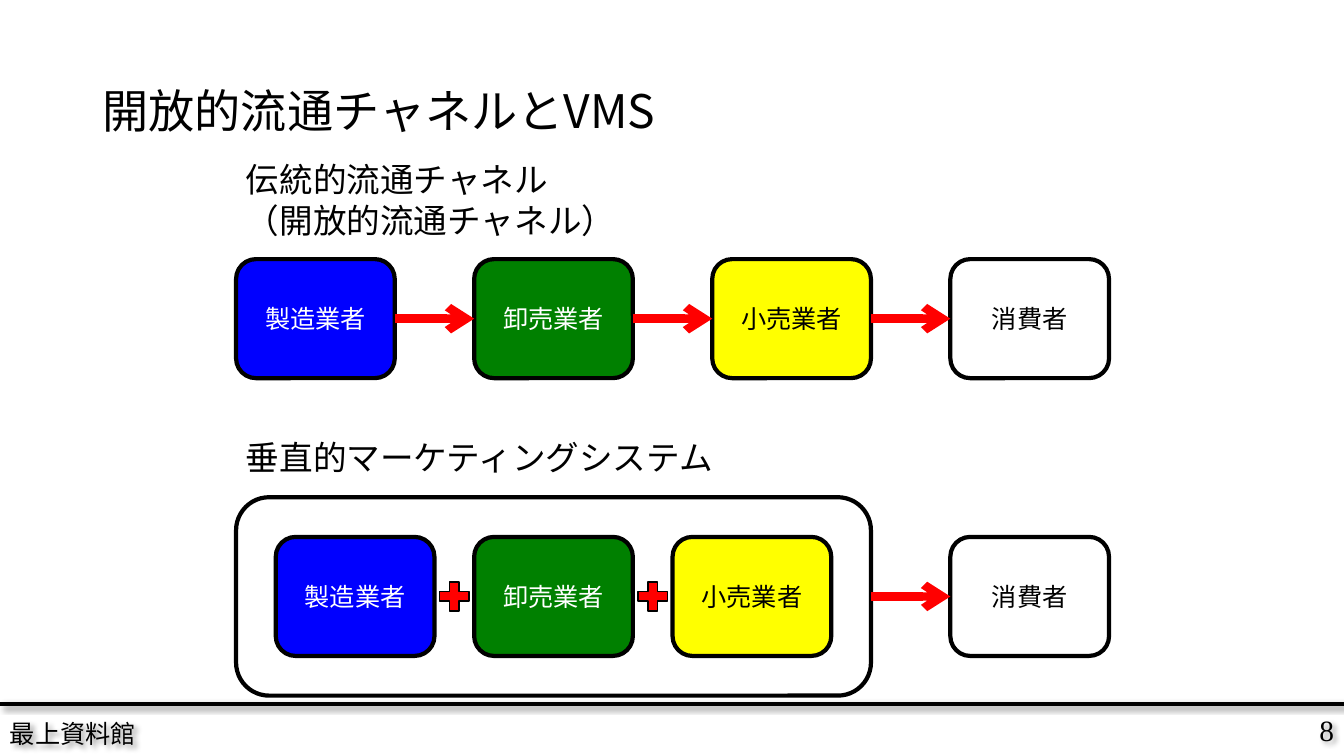
import pptx
import pptx.util
import pptx.dml.color
import pptx.enum.shapes
import pptx.enum.text
import pptx.oxml
import pptx.oxml.ns
import lxml.etree

Cm = pptx.util.Cm
Pt = pptx.util.Pt
SHAPE = pptx.enum.shapes.MSO_SHAPE
ALIGN = pptx.enum.text.PP_ALIGN

TITLE = "開放的流通チャネルとVMS"
OPEN_HEADING = ["伝統的流通チャネル", "（開放的流通チャネル）"]
VERTICAL_HEADING = ["垂直的マーケティングシステム"]
FOOTER = "最上資料館"
PAGE_NUMBER = "8"
PLAYERS = [
    ("製造業者", "0000FF", "FFFFFF"),
    ("卸売業者", "008000", "FFFFFF"),
    ("小売業者", "FFFF00", "000000"),
    ("消費者", None, "000000"),
]

THEME = {
    "ink": "000000", "accent": "FF0000",
    "body_font": "Times New Roman", "asian_font": "Noto Sans CJK JP",
    "title": 33, "heading": 24, "label": 18, "number": 21,
    "outline": 3, "arrow": 6, "plus_outline": 1,
}

PAGE_WIDTH, PAGE_HEIGHT = 33.87, 19.05
LEFT = 5.95
BOX_WIDTH, BOX_HEIGHT = 4, 3
OPEN_STEP, MERGED_STEP = 6, 5
OPEN_TOP, VERTICAL_TOP = 6.53, 13.53
MARGIN = 1
PLUS = 1
FRAME_WIDTH = 3 * BOX_WIDTH + 2 * (MERGED_STEP - BOX_WIDTH) + 2 * MARGIN
FRAME_HEIGHT = BOX_HEIGHT + 2 * MARGIN
FOOTER_LINE = 17.73

deck = pptx.Presentation()
deck.slide_width, deck.slide_height = Cm(PAGE_WIDTH), Cm(PAGE_HEIGHT)
page = deck.slides.add_slide(deck.slide_layouts[6])


def color(code):
    return pptx.dml.color.RGBColor.from_string(code)


def write(shape, lines, size, ink=THEME["ink"], align=ALIGN.LEFT,
          font=THEME["body_font"], spacing=None):
    frame = shape.text_frame
    frame.word_wrap = True
    frame.vertical_anchor = pptx.enum.text.MSO_ANCHOR.MIDDLE
    for index, line in enumerate(lines):
        para = frame.paragraphs[0] if index == 0 else frame.add_paragraph()
        para.alignment = align
        para.line_spacing = spacing
        span = para.add_run()
        span.text = line
        span.font.name = font
        span.font.size = Pt(size)
        span.font.color.rgb = color(ink)
        asian = lxml.etree.SubElement(span.font._element, pptx.oxml.ns.qn("a:ea"))
        asian.set("typeface", THEME["asian_font"])


def add_text(left, top, width, height, lines, size, **style):
    box = page.shapes.add_textbox(Cm(left), Cm(top), Cm(width), Cm(height))
    write(box, lines, size, **style)
    return box


def add_box(kind, left, top, width, height, fill, outline=THEME["outline"]):
    box = page.shapes.add_shape(kind, Cm(left), Cm(top), Cm(width), Cm(height))
    box.shadow.inherit = False
    if fill:
        box.fill.solid()
        box.fill.fore_color.rgb = color(fill)
    else:
        box.fill.background()
    box.line.color.rgb = color(THEME["ink"])
    box.line.width = Pt(outline)
    return box


def add_player(player, left, top):
    label, fill, ink = player
    box = add_box(SHAPE.ROUNDED_RECTANGLE, left, top, BOX_WIDTH, BOX_HEIGHT, fill)
    write(box, [label], THEME["label"], ink=ink, align=ALIGN.CENTER)


def add_line(start, end, y, ink, width):
    line = page.shapes.add_connector(
        pptx.enum.shapes.MSO_CONNECTOR.STRAIGHT, Cm(start), Cm(y), Cm(end), Cm(y))
    line.line.color.rgb = color(ink)
    line.line.width = Pt(width)
    return line


def add_arrow(end, row_top):
    gap = OPEN_STEP - BOX_WIDTH
    arrow = add_line(end - gap, end, row_top + BOX_HEIGHT / 2,
                     THEME["accent"], THEME["arrow"])
    outline = arrow.line._get_or_add_ln()
    lxml.etree.SubElement(outline, pptx.oxml.ns.qn("a:tailEnd")).set("type", "arrow")
    lxml.etree.SubElement(arrow._element.spPr, pptx.oxml.ns.qn("a:effectLst"))


def cast_shadow(shape):
    shape._element.spPr.append(pptx.oxml.parse_xml(
        f'<a:effectLst {pptx.oxml.ns.nsdecls("a")}>'
        '<a:outerShdw blurRad="50800" dist="38100" dir="2700000" algn="tl">'
        f'<a:srgbClr val="{THEME["ink"]}"><a:alpha val="40000"/></a:srgbClr>'
        '</a:outerShdw></a:effectLst>'))


cast_shadow(add_text(29.34, FOOTER_LINE, 4.53, 1.3, [PAGE_NUMBER],
                     THEME["number"], align=ALIGN.RIGHT))
cast_shadow(add_text(0, 17.9, 9.14, 1.15, [FOOTER], THEME["label"]))
cast_shadow(add_line(0, PAGE_WIDTH, FOOTER_LINE, THEME["ink"], THEME["outline"]))

add_text(2.33, 1.01, 29.21, 3.68, [TITLE], THEME["title"],
         font=THEME["asian_font"], spacing=0.9)
add_text(LEFT, OPEN_TOP - 3, 11, 3, OPEN_HEADING, THEME["heading"])
add_text(LEFT, VERTICAL_TOP - 3, 13.34, 2, VERTICAL_HEADING, THEME["heading"])

for index, player in enumerate(PLAYERS):
    left = LEFT + index * OPEN_STEP
    add_player(player, left, OPEN_TOP)
    if index:
        add_arrow(left, OPEN_TOP)

add_box(SHAPE.ROUNDED_RECTANGLE, LEFT, VERTICAL_TOP - MARGIN,
        FRAME_WIDTH, FRAME_HEIGHT, None)
for index, player in enumerate(PLAYERS[:3]):
    left = LEFT + MARGIN + index * MERGED_STEP
    add_player(player, left, VERTICAL_TOP)
    if index:
        add_box(SHAPE.MATH_PLUS, left - PLUS,
                VERTICAL_TOP + (BOX_HEIGHT - PLUS) / 2, PLUS, PLUS,
                THEME["accent"], THEME["plus_outline"])

consumer_left = LEFT + 3 * OPEN_STEP
add_player(PLAYERS[3], consumer_left, VERTICAL_TOP)
add_arrow(consumer_left, VERTICAL_TOP)

deck.save("out.pptx")
